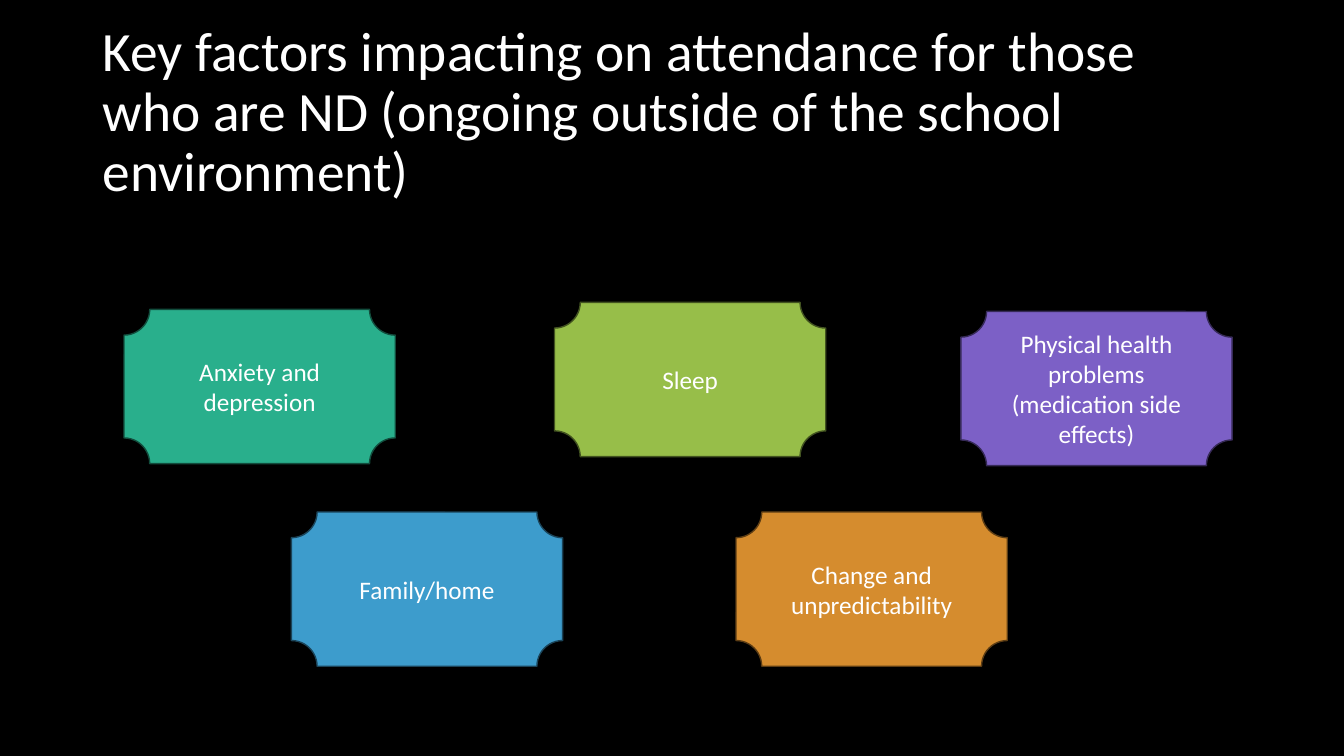
from pptx import Presentation
from pptx.dml.color import RGBColor as Rgb
from pptx.enum.shapes import MSO_SHAPE as Kind
from pptx.enum.text import MSO_ANCHOR as Anchor, PP_ALIGN as Align
from pptx.util import Inches, Pt

TITLE = ("Key factors impacting on attendance for those who are ND "
         "(ongoing outside of the school environment)")
FACTORS = [
    ("Anxiety and depression", "green", 1.23, 3.07),
    ("Sleep", "lime", 5.5, 3),
    ("Physical health problems (medication side effects)", "purple", 9.53, 3.09),
    ("Family/home", "blue", 2.89, 5.08),
    ("Change and unpredictability", "orange", 7.3, 5.08),
]
FILLS = {"green": "29AF8C", "lime": "97BE49", "purple": "7C60C6",
         "blue": "3D9CCC", "orange": "D58C2E", "black": "000000",
         "white": "FFFFFF"}
EDGES = {"green": "124D3D", "lime": "425320", "purple": "362A57",
         "blue": "1B4459", "orange": "5D3D14"}
WIDE, HIGH = 13.33, 7.5
SIZE = 2.69, 1.53


def color(code):
    return Rgb.from_string(code)


def write(shape, text, size=18, align=Align.CENTER, space=1.0):
    frame = shape.text_frame
    frame.word_wrap = True
    frame.vertical_anchor = Anchor.MIDDLE
    para = frame.paragraphs[0]
    para.alignment = align
    para.line_spacing = space
    run = para.add_run()
    run.text = text
    run.font.name = "Calibri"
    run.font.size = Pt(size)
    run.font.color.rgb = color(FILLS["white"])


def plaque(slide, text, hue, left, top):
    shape = slide.shapes.add_shape(Kind.PLAQUE, *map(Inches, (left, top, *SIZE)))
    shape.shadow.inherit = False
    shape.fill.solid()
    shape.fill.fore_color.rgb = color(FILLS[hue])
    shape.line.color.rgb = color(EDGES[hue])
    shape.line.width = Pt(1)
    write(shape, text)


def main():
    deck = Presentation()
    deck.slide_width, deck.slide_height = Inches(WIDE), Inches(HIGH)
    slide = deck.slides.add_slide(deck.slide_layouts[6])
    back = slide.background.fill
    back.solid()
    back.fore_color.rgb = color(FILLS["black"])
    title = slide.shapes.add_textbox(*map(Inches, (0.92, 0.4, 11.5, 1.45)))
    write(title, TITLE, size=39.6, align=Align.LEFT, space=0.9)
    for factor in FACTORS:
        plaque(slide, *factor)
    deck.save("out.pptx")


if __name__ == "__main__":
    main()
